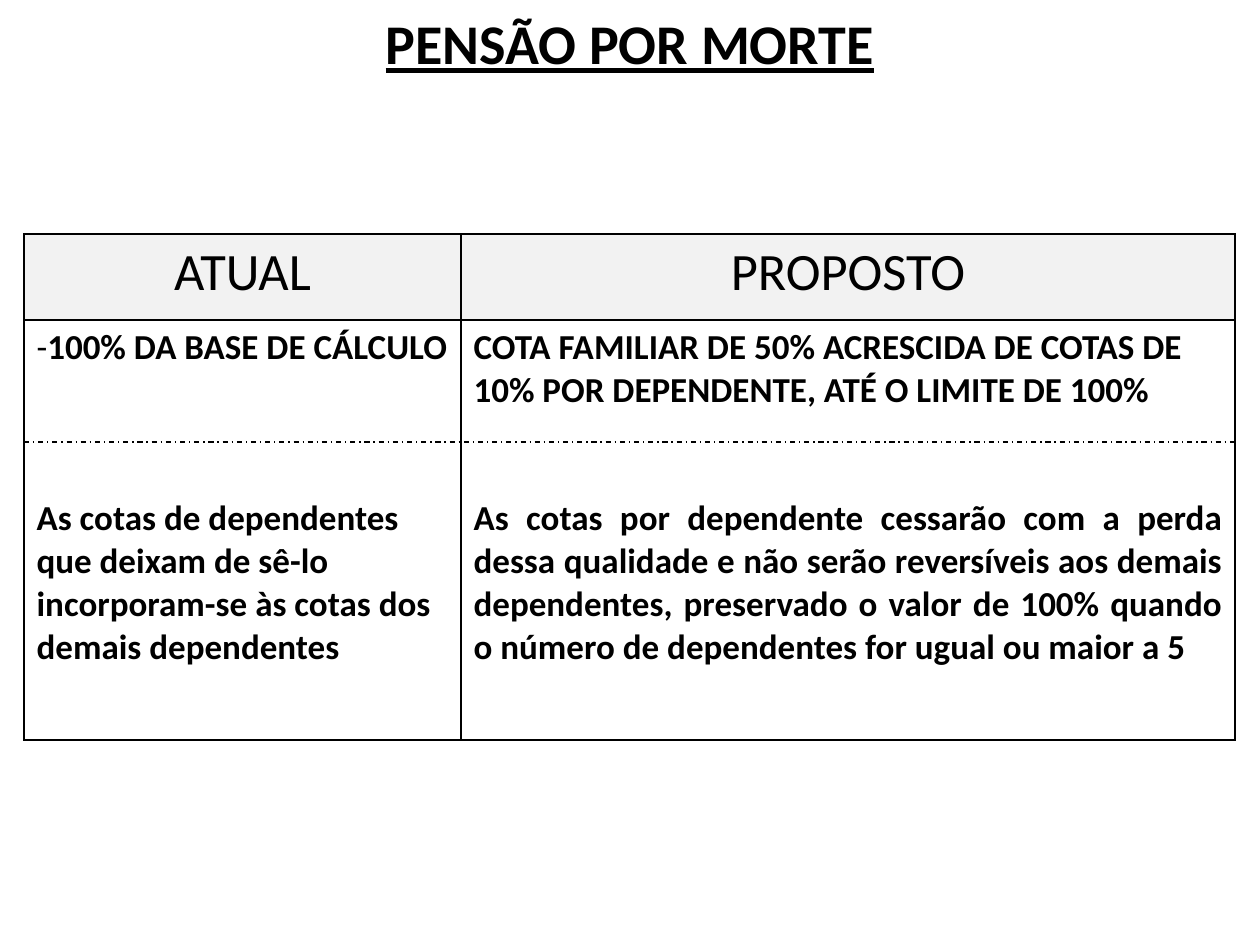
from dataclasses import dataclass

from lxml.etree import SubElement
from pptx import Presentation
from pptx.dml.color import RGBColor
from pptx.enum.dml import MSO_LINE
from pptx.enum.shapes import MSO_CONNECTOR
from pptx.enum.text import MSO_ANCHOR, MSO_AUTO_SIZE, PP_ALIGN
from pptx.oxml.ns import qn
from pptx.util import Emu, Pt

PIXELS_PER_INCH = 126


def px(length):
    return Emu(round(length * 914400 / PIXELS_PER_INCH))


@dataclass(frozen=True)
class Theme:
    font: str = "Calibri"
    ink: str = "000000"
    header_fill: str = "F2F2F2"
    title_size: int = 32
    header_size: int = 30
    body_size: int = 20
    body_line: float = 24.4  # height of one body line in points
    border: float = 1
    divider: float = 0.75


@dataclass(frozen=True)
class Entry:
    """A paragraph as (text, bold) runs, with a gap above counted in lines."""
    runs: tuple
    align: PP_ALIGN = PP_ALIGN.LEFT
    gap_lines: int = 0


class SlideBuilder:
    def __init__(self, slide, theme):
        self.slide = slide
        self.theme = theme

    def style_run(self, run, size, bold=False, underline=False):
        run.font.name = self.theme.font
        run.font.size = Pt(size)
        run.font.bold = bold
        run.font.underline = underline
        run.font.color.rgb = RGBColor.from_string(self.theme.ink)

    def title(self, text, left, top, width, height, margin_top):
        shape = self.slide.shapes.title
        shape.left, shape.top = px(left), px(top)
        shape.width, shape.height = px(width), px(height)
        frame = shape.text_frame
        frame.text = text
        frame.auto_size = MSO_AUTO_SIZE.NONE
        frame.vertical_anchor = MSO_ANCHOR.TOP
        frame.margin_top = px(margin_top)
        paragraph = frame.paragraphs[0]
        paragraph.alignment = PP_ALIGN.CENTER
        self.style_run(paragraph.runs[0], self.theme.title_size, True, True)

    def cell_borders(self, cell):
        properties = cell._tc.get_or_add_tcPr()
        for side in ("a:lnL", "a:lnR", "a:lnT", "a:lnB"):
            line = SubElement(properties, qn(side), w=str(Pt(self.theme.border)))
            fill = SubElement(line, qn("a:solidFill"))
            SubElement(fill, qn("a:srgbClr"), val=self.theme.ink)

    def cell(self, cell, entries, size, fill=None):
        self.cell_borders(cell)
        if fill:
            cell.fill.solid()
            cell.fill.fore_color.rgb = RGBColor.from_string(fill)
        else:
            cell.fill.background()
        frame = cell.text_frame
        for index, entry in enumerate(entries):
            paragraph = frame.add_paragraph() if index else frame.paragraphs[0]
            paragraph.alignment = entry.align
            paragraph.space_before = Pt(entry.gap_lines * self.theme.body_line)
            for text, bold in entry.runs:
                run = paragraph.add_run()
                run.text = text
                self.style_run(run, size, bold)

    def table(self, left, top, widths, heights, headers, bodies):
        table = self.slide.shapes.add_table(
            len(heights), len(widths), px(left), px(top),
            px(sum(widths)), px(sum(heights))).table
        table.first_row = table.horz_banding = False
        for row, height in zip(table.rows, heights):
            row.height = px(height)
        for index, (width, header, body) in enumerate(zip(widths, headers, bodies)):
            table.columns[index].width = px(width)
            heading = Entry(((header, False),), PP_ALIGN.CENTER)
            self.cell(table.cell(0, index), [heading],
                      self.theme.header_size, self.theme.header_fill)
            self.cell(table.cell(1, index), body, self.theme.body_size)

    def divider(self, left, right, y):
        connector = self.slide.shapes.add_connector(
            MSO_CONNECTOR.STRAIGHT, px(left), px(y), px(right), px(y))
        connector.line.color.rgb = RGBColor.from_string(self.theme.ink)
        connector.line.width = Pt(self.theme.divider)
        connector.line.dash_style = MSO_LINE.DASH_DOT
        SubElement(connector._element.spPr, qn("a:effectLst"))


def main():
    presentation = Presentation()
    presentation.slide_width, presentation.slide_height = px(1260), px(945)
    title_only = presentation.slide_layouts[5]
    builder = SlideBuilder(presentation.slides.add_slide(title_only), Theme())

    # Title
    builder.title("PENSÃO POR MORTE", 0, 0, 1260, 929, margin_top=9)

    # Comparison of the current and proposed rules
    current = [
        Entry((("-", False), ("100% DA BASE DE CÁLCULO", True))),
        Entry((("As cotas de dependentes que deixam de sê-lo incorporam-se "
                "às cotas dos demais dependentes", True),), gap_lines=3),
    ]
    proposed = [
        Entry((("COTA FAMILIAR DE 50% ACRESCIDA DE COTAS DE 10% POR "
                "DEPENDENTE, ATÉ O LIMITE DE 100%", True),)),
        Entry((("As cotas por dependente cessarão com a perda dessa qualidade "
                "e não serão reversíveis aos demais dependentes, preservado o "
                "valor de 100% quando o número de dependentes for ugual ou "
                "maior a 5", True),), PP_ALIGN.JUSTIFY, gap_lines=2),
    ]
    left, widths = 24, (437, 774)
    builder.table(left, 234, widths, (86, 420),
                  ("ATUAL", "PROPOSTO"), (current, proposed))

    # Divider between the two rules
    builder.divider(left, left + sum(widths), 442)

    presentation.save("out.pptx")


if __name__ == "__main__":
    main()
